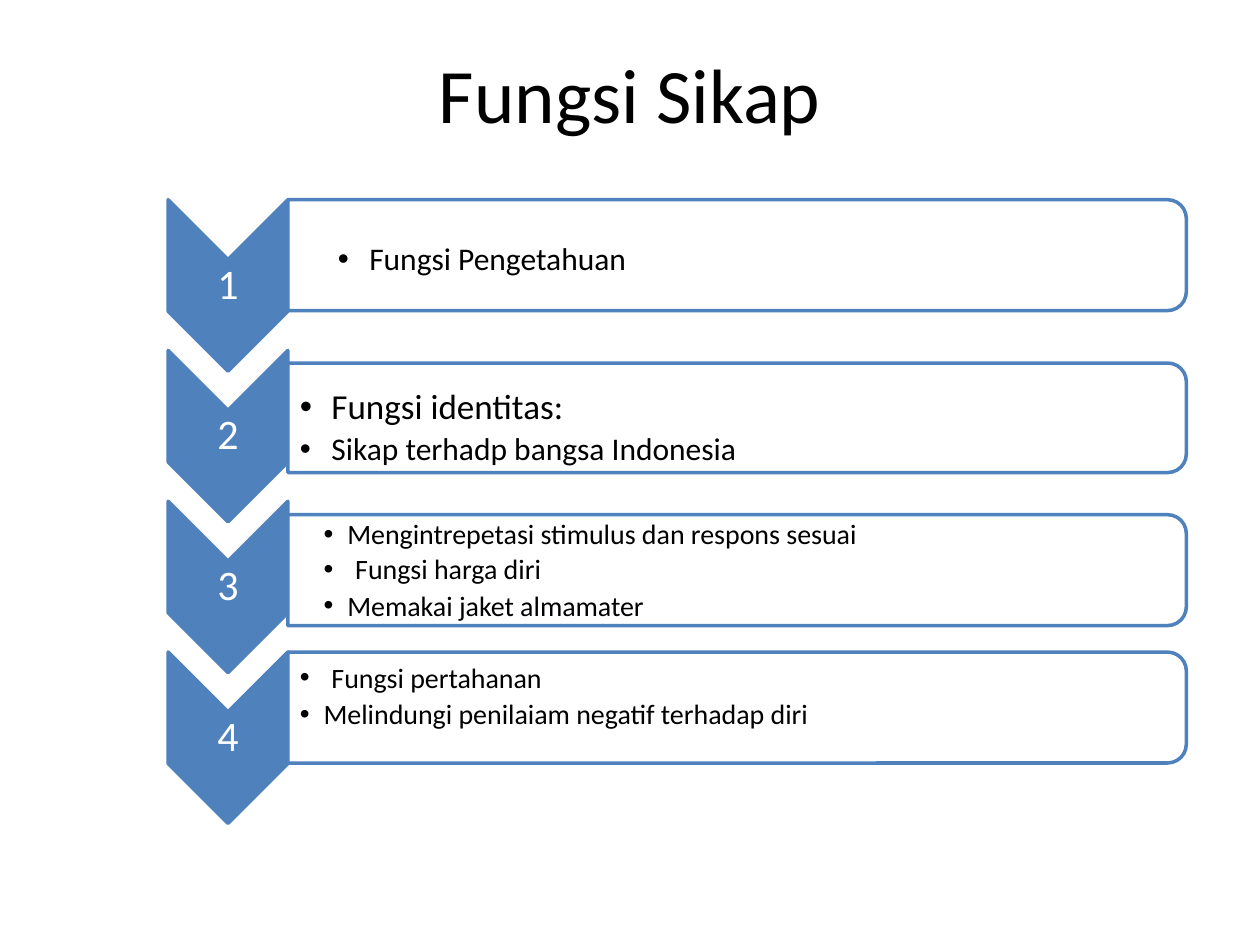
from dataclasses import dataclass

from lxml.etree import SubElement as Sub
from pptx import Presentation
from pptx.dml.color import RGBColor as Rgb
from pptx.enum.shapes import MSO_SHAPE as Shape
from pptx.enum.text import MSO_ANCHOR as Anchor, MSO_AUTO_SIZE as Fit, PP_ALIGN as Align
from pptx.oxml.ns import qn
from pptx.util import Pt

COLORS = {"blue": "4F81BD", "white": "FFFFFF", "black": "000000"}
FONT = "Calibri"

# Chevron column and bar geometry, in points
MID_X, FIRST_Y, STEP = 130.3, 163.1, 86.15
CHEV_W, CHEV_H = 97.9, 68.4
BAR_X, BAR_W = 164.5, 513.4
LIST_W = 364.3


@dataclass
class Item:
    text: str
    size: float
    indent: float = 18
    after: float = 3.6


@dataclass
class Row:
    bar_y: float
    bar_h: float
    list_x: float
    list_y: float
    list_h: float
    items: list[Item]


ROWS = [
    Row(114.1, 63.4, 185.8, 135.4, 26.6, [Item("Fungsi Pengetahuan", 18)]),
    Row(207.5, 62.6, 164.2, 218.9, 52.6, [
        Item("Fungsi identitas:", 20),
        Item("Sikap terhadp bangsa Indonesia", 18, after=3)]),
    Row(294.1, 63.4, 177.8, 293.8, 87.1, [
        Item("Mengintrepetasi stimulus dan respons sesuai", 16, 13.5, 2.7),
        Item("Fungsi harga diri", 16),
        Item("Memakai jaket almamater", 16, 13.5, 2.7)]),
    Row(372.6, 63.4, 164.2, 375.8, 46.1, [
        Item("Fungsi pertahanan", 16),
        Item("Melindungi penilaiam negatif terhadap diri", 16, 13.5, 2.7)]),
]


def color(name: str) -> Rgb:
    return Rgb.from_string(COLORS[name])


def style(para, size: float, name: str) -> None:
    for run in para.runs:
        font = run.font
        font.name, font.size, font.bold = FONT, Pt(size), False
        font.color.rgb = color(name)


def place(shape, x: float, y: float, w: float, h: float) -> None:
    shape.left, shape.top, shape.width, shape.height = Pt(x), Pt(y), Pt(w), Pt(h)


def turned(slide, kind, mid_x: float, mid_y: float, w: float, h: float, fill: str):
    """Add an outlined shape turned a quarter about its centre."""
    shape = slide.shapes.add_shape(
        kind, Pt(mid_x - w / 2), Pt(mid_y - h / 2), Pt(w), Pt(h))
    shape.rotation = 90
    shape.shadow.inherit = False
    shape.fill.solid()
    shape.fill.fore_color.rgb = color(fill)
    shape.line.color.rgb = color("blue")
    shape.line.width = Pt(2)
    return shape


def add_chevron(slide, num: int) -> None:
    mid_y = FIRST_Y + (num - 1) * STEP
    shape = turned(slide, Shape.CHEVRON, MID_X, mid_y, CHEV_W, CHEV_H, "blue")
    shape.adjustments[0] = 0.5
    frame = shape.text_frame
    frame.text = str(num)
    frame.vertical_anchor = Anchor.MIDDLE
    frame.margin_left = frame.margin_right = Pt(1.44)
    frame.margin_top = frame.margin_bottom = Pt(1.44)
    # Keep the number upright
    shape.element.txBody.find(qn("a:bodyPr")).set("rot", "-5400000")
    para = frame.paragraphs[0]
    para.alignment, para.line_spacing, para.space_after = Align.CENTER, 0.9, Pt(8.4)
    style(para, 24, "white")


def add_bar(slide, row: Row) -> None:
    shape = turned(slide, Shape.ROUND_2_SAME_RECTANGLE, BAR_X + BAR_W / 2,
                   row.bar_y + row.bar_h / 2, row.bar_h, BAR_W, "white")
    shape.adjustments[0], shape.adjustments[1] = 0.17, 0
    tint = shape.element.spPr.find(qn("a:solidFill"))[0]
    Sub(tint, qn("a:alpha")).set("val", "90000")


def add_bullet(para, indent: float) -> None:
    props = para._p.get_or_add_pPr()
    props.set("marL", str(Pt(indent)))
    props.set("indent", str(-Pt(indent)))
    tint = Sub(Sub(props, qn("a:buClr")), qn("a:srgbClr"))
    tint.set("val", COLORS["black"])
    Sub(props, qn("a:buFont")).set("typeface", "Arial")
    Sub(props, qn("a:buChar")).set("char", "•")


def fill_list(box, row: Row) -> None:
    place(box, row.list_x, row.list_y, LIST_W, row.list_h)
    frame = box.text_frame
    frame.text = "\n".join(item.text for item in row.items)
    frame.word_wrap, frame.auto_size = True, Fit.NONE
    frame.vertical_anchor = Anchor.TOP
    for para, item in zip(frame.paragraphs, row.items):
        para.level, para.line_spacing = 1, 0.9
        para.space_before, para.space_after = Pt(0), Pt(item.after)
        add_bullet(para, item.indent)
        style(para, item.size, "black")
    # Bring the list in front of its bar
    box.element.getparent().append(box.element)


def main() -> None:
    deck = Presentation()
    deck.slide_width, deck.slide_height = Pt(720), Pt(540)
    # The comparison layout holds a title and four bodies
    slide = deck.slides.add_slide(deck.slide_layouts[4])
    bodies = [slide.placeholders[idx] for idx in (1, 2, 3, 4)]

    # Title
    title = slide.shapes.title
    place(title, 36, 21.6, 648, 62.6)
    title.text_frame.text = "Fungsi Sikap"
    title.text_frame.paragraphs[0].alignment = Align.CENTER
    style(title.text_frame.paragraphs[0], 44, "black")

    # Numbered chevrons and bars
    for num, row in enumerate(ROWS, 1):
        add_chevron(slide, num)
        add_bar(slide, row)

    # Lists
    for body, row in zip(bodies, ROWS):
        fill_list(body, row)

    deck.save("out.pptx")


if __name__ == "__main__":
    main()
